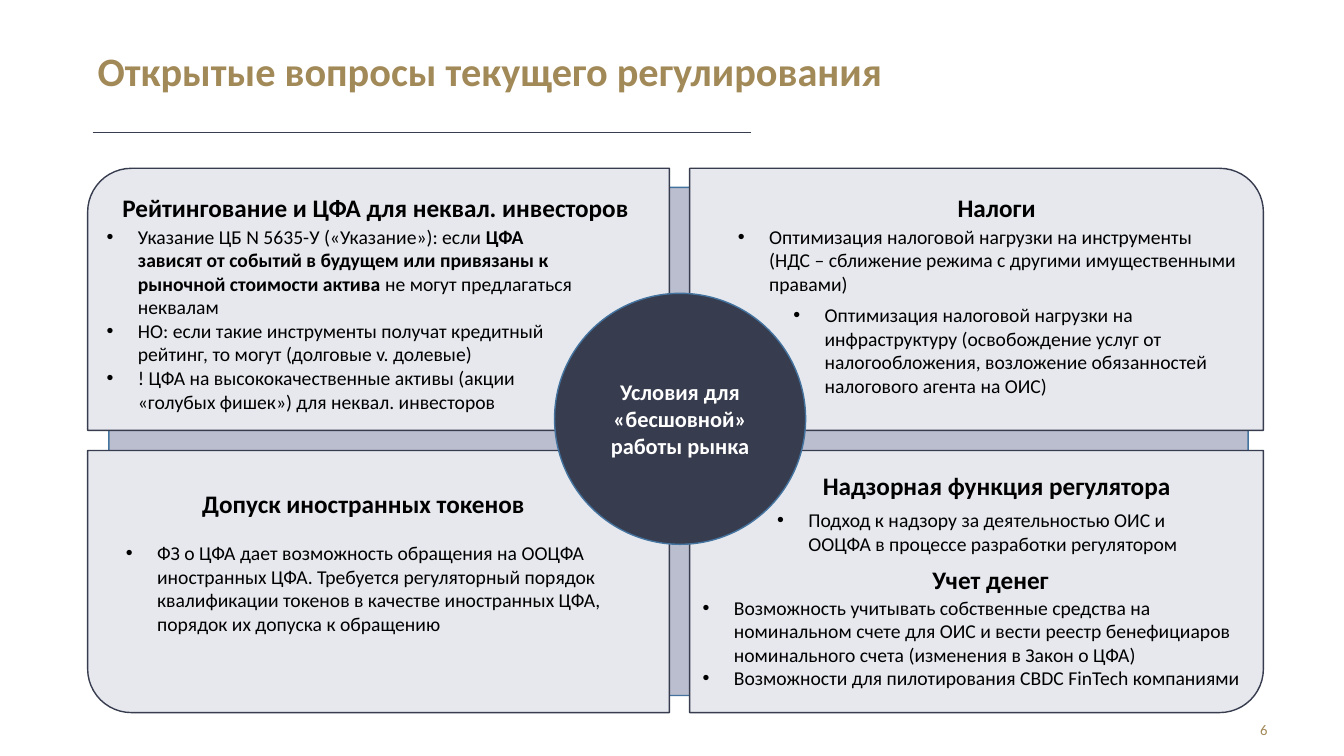
from lxml.etree import SubElement
from pptx import Presentation
from pptx.dml.color import RGBColor
from pptx.enum.shapes import MSO_CONNECTOR as CONN, MSO_SHAPE as SHAPE
from pptx.enum.text import MSO_ANCHOR as ANCHOR, PP_ALIGN as ALIGN
from pptx.oxml.ns import qn
from pptx.util import Inches, Pt

GOLD, NAVY, BLUE = "A28958", "373C4E", "43739E"
PANEL, BACKING, BLACK, WHITE = "E6E8EE", "BABECE", "000000", "FFFFFF"
FONT = "Calibri"

TITLE = "Открытые вопросы текущего регулирования"
CENTER = "Условия для «бесшовной» работы рынка"
PAGE = "6"

# Grid of panels: (left, width) per column, top per row
COLS = [(0.87, 5.77), (6.84, 5.69)]
ROWS = [1.67, 4.47]
PANEL_H = 2.6
HEAD_W, HEAD_H = 5.53, 0.4

# (column, row): headings (dx, dy, text) and
# bullet blocks (dx, dy, width, height, paragraphs of (text, bold) runs),
# with dx and dy measured from the corner of the panel
PANELS = {
    (0, 0): (
        [(0.09, 0.19, "Рейтингование и ЦФА для неквал. инвесторов")],
        [(0.09, 0.51, 4.92, 1.99, [
            [("Указание ЦБ N 5635-У («Указание»): если ", False),
             ("ЦФА зависят от событий в будущем или привязаны к "
              "рыночной стоимости актива", True),
             (" не могут предлагаться неквалам", False)],
            [("НО: если такие инструменты получат кредитный рейтинг, "
              "то могут (долговые v. долевые)", False)],
            [("! ЦФА на высококачественные активы (акции «голубых фишек») "
              "для неквал. инвесторов", False)],
        ])],
    ),
    (1, 0): (
        [(0.28, 0.19, "Налоги")],
        [(0.38, 0.51, 5.15, 0.81, [
            [("Оптимизация налоговой нагрузки на инструменты (НДС – сближение "
              "режима с другими имущественными правами)", False)],
        ]), (0.93, 1.29, 4.49, 1.04, [
            [("Оптимизация налоговой нагрузки на инфраструктуру (освобождение "
              "услуг от налогообложения, возложение обязанностей налогового "
              "агента на ОИС)", False)],
        ])],
    ),
    (0, 1): (
        [(-0.03, 0.33, "Допуск иностранных токенов")],
        [(0.28, 0.85, 5.04, 1.04, [
            [("ФЗ о ЦФА дает возможность обращения на ООЦФА иностранных ЦФА. "
              "Требуется регуляторный порядок квалификации токенов в качестве "
              "иностранных ЦФА, порядок их допуска к обращению", False)],
        ])],
    ),
    (1, 1): (
        [(0.28, 0.15, "Надзорная функция регулятора"), (0.22, 1.08, "Учет денег")],
        [(0.77, 0.52, 4.52, 0.57, [
            [("Подход к надзору за деятельностью ОИС и ООЦФА в процессе "
              "разработки регулятором", False)],
        ]), (0.03, 1.39, 5.71, 1.28, [
            [("Возможность учитывать собственные средства на номинальном счете "
              "для ОИС и вести реестр бенефициаров номинального счета "
              "(изменения в Закон о ЦФА)", False)],
            [("Возможности для пилотирования CBDC FinTech компаниями", False)],
        ])],
    ),
}

prs = Presentation()
prs.slide_width, prs.slide_height = Inches(13.33), Inches(7.5)
slide = prs.slides.add_slide(prs.slide_layouts[6])


def rgb(color):
    return RGBColor.from_string(color)


def add_shape(kind, box, fill, line):
    sp = slide.shapes.add_shape(kind, *map(Inches, box))
    sp.shadow.inherit = False
    sp.fill.solid()
    sp.fill.fore_color.rgb = rgb(fill)
    sp.line.color.rgb = rgb(line)
    sp.line.width = Pt(1)
    return sp


def add_bullet(p):
    pPr = p._p.get_or_add_pPr()
    pPr.set("marL", str(Inches(0.31)))
    pPr.set("indent", str(-Inches(0.31)))
    SubElement(pPr, qn("a:buFont")).set("typeface", "Arial")
    SubElement(pPr, qn("a:buChar")).set("char", "•")


def write(sp, paragraphs, size, color, align=ALIGN.LEFT, anchor=ANCHOR.TOP, bullets=False):
    tf = sp.text_frame
    tf.word_wrap = True
    tf.vertical_anchor = anchor
    for i, runs in enumerate(paragraphs):
        p = tf.add_paragraph() if i else tf.paragraphs[0]
        p.alignment = align
        if bullets:
            add_bullet(p)
        for text, bold in runs:
            r = p.add_run()
            r.text = text
            r.font.name, r.font.size, r.font.bold = FONT, Pt(size), bold
            r.font.color.rgb = rgb(color)


def add_text(box, paragraphs, size, color, **style):
    write(slide.shapes.add_textbox(*map(Inches, box)), paragraphs, size, color, **style)


rule = slide.shapes.add_connector(CONN.STRAIGHT, *map(Inches, (0.92, 1.31, 7.45, 1.31)))
rule.line.color.rgb = rgb(NAVY)
rule.line.width = Pt(0.5)
SubElement(rule._element.spPr, qn("a:effectLst"))

add_text((0.87, 0.53, 10.29, 0.34), [[(TITLE, True)]], 28.8, GOLD, anchor=ANCHOR.MIDDLE)
add_text((9.67, 7.1, 3, 0.4), [[(PAGE, False)]], 10.5, GOLD, align=ALIGN.RIGHT)

add_shape(SHAPE.ROUNDED_RECTANGLE, (1.08, 1.86, 11.3, 5.04), BACKING, BLUE)
for col, row in PANELS:
    left, width = COLS[col]
    sp = add_shape(SHAPE.ROUND_1_RECTANGLE, (left, ROWS[row], width, PANEL_H), PANEL, NAVY)
    # The round corner points away from the centre
    xfrm = sp._element.spPr.xfrm
    if col == 0:
        xfrm.set("flipH", "1")
    if row == 1:
        xfrm.set("flipV", "1")

hub = add_shape(SHAPE.OVAL, (5.5, 2.91, 2.49, 2.49), NAVY, BLUE)
write(hub, [[(CENTER, True)]], 16, WHITE, align=ALIGN.CENTER, anchor=ANCHOR.MIDDLE)

for (col, row), (headings, blocks) in PANELS.items():
    left, top = COLS[col][0], ROWS[row]
    for dx, dy, text in headings:
        add_text((left + dx, top + dy, HEAD_W, HEAD_H), [[(text, True)]], 18, BLACK,
                 align=ALIGN.CENTER)
    for dx, dy, width, height, paragraphs in blocks:
        add_text((left + dx, top + dy, width, height), paragraphs, 14, BLACK, bullets=True)

prs.save("out.pptx")
